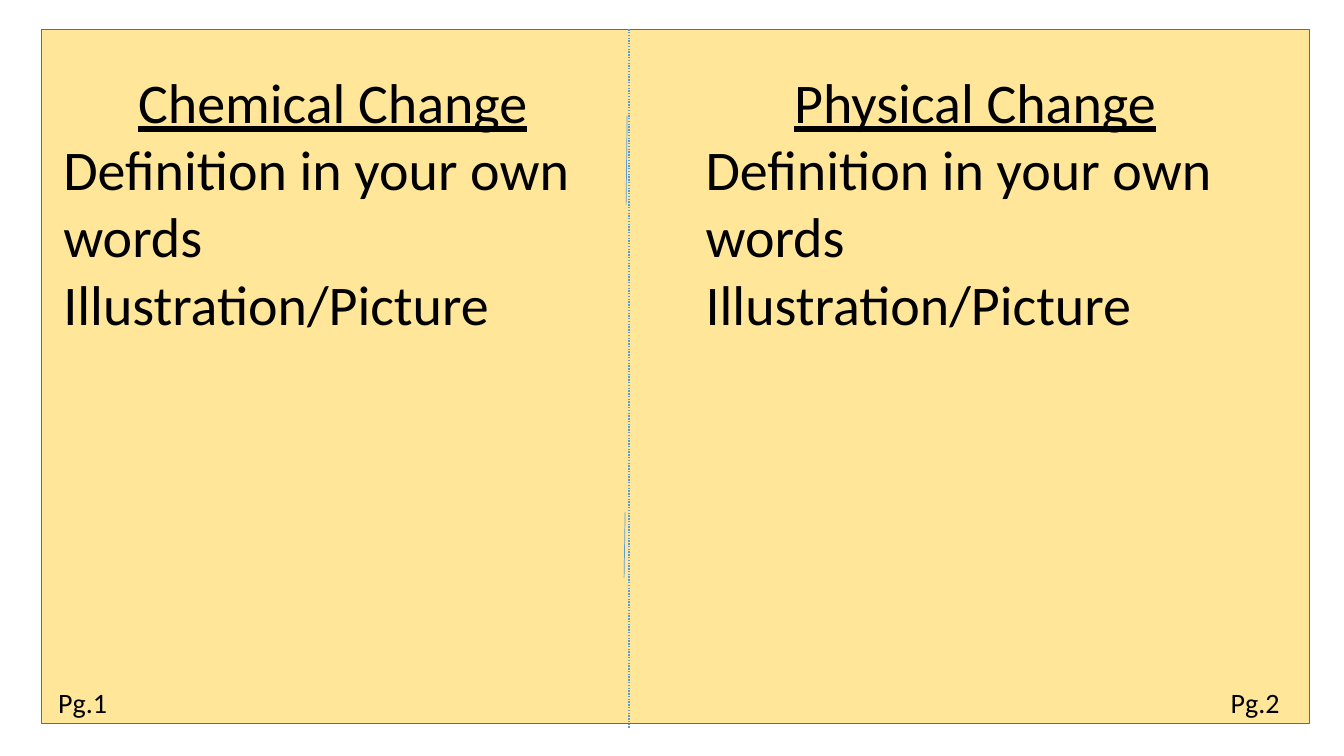
import pptx
import pptx.util
import pptx.dml.color
import pptx.enum.dml
import pptx.enum.shapes
import pptx.enum.text
from lxml import etree

ALIGN = pptx.enum.text.PP_ALIGN
DASH = pptx.enum.dml.MSO_LINE
PX = 9144  # 100 px to the inch

PROMPTS = ["Definition in your own words", "Illustration/Picture"]
# title, left of its text, page label, left of the label
PAGES = [
    ("Chemical Change", 53, "Pg.1", 4),
    ("Physical Change", 690, "Pg.2", 1167),
]
CARD = (41, 29, 1258, 689)
# start x, start y, end x, end y, width, dash
FOLDS = [
    (622, 115, 621, 203, 0.5, None),
    (620, 508, 619, 573, 0.5, None),
    (624, 29, 624, 722, 1, DASH.ROUND_DOT),
]
BODY = {"top": 62, "width": 554, "height": 279}
LABEL = {"top": 675, "width": 156, "height": 44}

THEME = {
    "font": "Calibri", "ink": "000000", "card": "FFE699",
    "edge": "43739E", "fold": "5B9BD5", "body": 40, "label": 20,
}


def emu(*spans):
    return [span * PX for span in spans]


def tint(name):
    return pptx.dml.color.RGBColor.from_string(THEME[name])


def stroke(line, name, width, dash=None):
    line.color.rgb = tint(name)
    line.width = pptx.util.Pt(width)
    if dash is not None:
        line.dash_style = dash


def draw_card(slide):
    kind = pptx.enum.shapes.MSO_SHAPE.RECTANGLE
    card = slide.shapes.add_shape(kind, *emu(*CARD))
    card.shadow.inherit = False
    card.fill.solid()
    card.fill.fore_color.rgb = tint("card")
    stroke(card.line, "edge", 1)


def draw_fold(slide, ends, width, dash):
    kind = pptx.enum.shapes.MSO_CONNECTOR.STRAIGHT
    fold = slide.shapes.add_connector(kind, *emu(*ends))
    stroke(fold.line, "fold", width, dash)
    props = fold.line._get_or_add_ln().getparent()
    etree.SubElement(props, pptx.oxml.ns.qn("a:effectLst"))


def write(slide, left, box, size, lines):
    """Add a text box; each line is (text, alignment, underline)."""
    spans = emu(left, box["top"], box["width"], box["height"])
    frame = slide.shapes.add_textbox(*spans).text_frame
    frame.word_wrap = True
    frame.auto_size = pptx.enum.text.MSO_AUTO_SIZE.SHAPE_TO_FIT_TEXT
    for i, (text, align, under) in enumerate(lines):
        para = frame.add_paragraph() if i else frame.paragraphs[0]
        para.alignment = align
        run = para.add_run()
        run.text = text
        look = {"name": THEME["font"], "size": pptx.util.Pt(THEME[size]),
                "underline": under}
        for key, value in look.items():
            setattr(run.font, key, value)
        run.font.color.rgb = tint("ink")


def main():
    deck = pptx.Presentation()
    deck.slide_width, deck.slide_height = emu(1333, 750)
    slide = deck.slides.add_slide(deck.slide_layouts[6])
    draw_card(slide)
    for *ends, width, dash in FOLDS:
        draw_fold(slide, ends, width, dash)
    for title, left, _, _ in PAGES:
        lines = [(title, ALIGN.CENTER, True)]
        lines += [(text, ALIGN.LEFT, False) for text in PROMPTS]
        write(slide, left, BODY, "body", lines)
    for _, _, label, left in PAGES:
        write(slide, left, LABEL, "label", [(label, ALIGN.CENTER, False)])
    deck.save("out.pptx")


if __name__ == "__main__":
    main()
